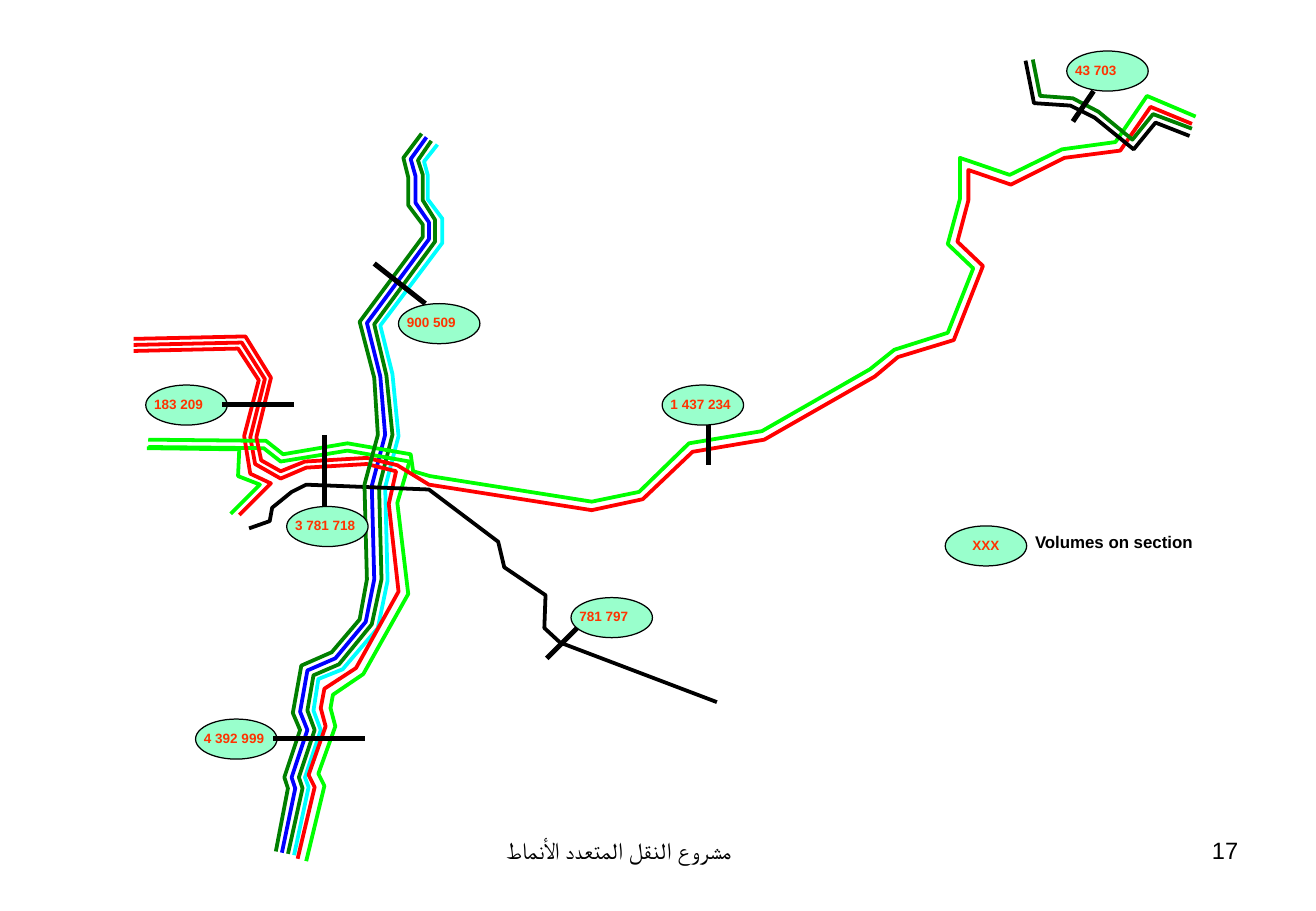
"""Transport network map with passenger volumes on each section."""
from dataclasses import dataclass
from itertools import pairwise
from math import hypot

from lxml.etree import SubElement
from pptx import Presentation
from pptx.dml.color import RGBColor
from pptx.enum.shapes import MSO_CONNECTOR as Connector, MSO_SHAPE as Shape
from pptx.enum.text import PP_ALIGN as Align
from pptx.oxml.ns import qn
from pptx.util import Cm, Pt

BLACK = RGBColor.from_string("000000")
RED = RGBColor.from_string("FF0000")
LIME = RGBColor.from_string("00FF00")
GREEN = RGBColor.from_string("008000")
BLUE = RGBColor.from_string("0000FF")
CYAN = RGBColor.from_string("00FFFF")
MINT = RGBColor.from_string("99FFCC")
ORANGE = RGBColor.from_string("FF3300")

UNITS_PER_INCH = 100
SCALE = Cm(2.54) / UNITS_PER_INCH
OVAL_W, OVAL_H = 67, 33
LABEL_DX, LABEL_DY, LABEL_H = 3, 4, 23

VOLUME_FONT = {"name": "Arial", "size": Pt(8), "bold": True}
LEGEND_FONT = {"name": "Arial", "size": Pt(10), "bold": True}
FOOTER_FONT = {"name": "Arial", "size": Pt(14), "bold": False}

Point = tuple[int, int]
Points = tuple[Point, ...]


@dataclass(frozen=True)
class Route:
    color: RGBColor
    points: Points


@dataclass(frozen=True)
class Volume:
    left: int
    top: int
    text: str
    align: Align = Align.LEFT


@dataclass(frozen=True)
class Section:
    start: Point
    end: Point


@dataclass(frozen=True)
class Caption:
    box: tuple[int, int, int, int]
    text: str
    font: dict
    color: RGBColor = BLACK
    align: Align = Align.LEFT
    rtl: bool = False


def beside(points: Points, gap: float) -> Points:
    """Return a parallel line, to the right of travel for a positive gap."""
    normals = []
    for (x1, y1), (x2, y2) in pairwise(points):
        length = hypot(x2 - x1, y2 - y1)
        normals.append(((y1 - y2) / length, (x2 - x1) / length))
    befores, afters = normals[:1] + normals, normals + normals[-1:]
    moved = []
    for (x, y), (ax, ay), (bx, by) in zip(points, befores, afters):
        k = gap / (1 + ax * bx + ay * by)
        moved.append((round(x + k * (ax + bx)), round(y + k * (ay + by))))
    return tuple(moved)


SPINE = (
    (232, 702), (243, 649), (240, 640), (253, 601), (247, 586), (253, 552),
    (276, 542), (301, 512), (308, 477), (306, 400), (317, 358), (313, 310),
    (302, 266), (353, 197), (353, 183), (342, 167), (342, 145), (338, 131),
    (351, 113))
RED_WEST = (
    (110, 284), (199, 282), (218, 312), (206, 360), (210, 382), (231, 394),
    (252, 385), (302, 382), (326, 388))
LIME_WEST = ((122, 362), (219, 363), (233, 374), (286, 365), (338, 374))
SOUTH = (
    (320, 415), (328, 487), (293, 550), (267, 567), (264, 583), (268, 598),
    (254, 638), (259, 648), (245, 707))
EAST = (
    (353, 399), (487, 420), (529, 411), (570, 372), (629, 362), (720, 310),
    (739, 294), (785, 280), (809, 219), (788, 199), (797, 165), (797, 140),
    (832, 152), (876, 130), (922, 124), (947, 88), (981, 102))
NORTH_EAST = (
    (844, 50), (851, 85), (881, 87), (901, 97), (933, 123), (951, 101), (979, 112))
SOUTH_EAST = (
    (205, 435), (222, 429), (224, 418), (240, 405), (252, 399), (353, 403),
    (410, 446), (415, 467), (449, 490), (448, 517), (461, 529), (590, 578))
RED_SPUR = ((206, 390), (223, 398), (197, 424))
LIME_SPUR = ((121, 369), (197, 370), (196, 392), (214, 399), (190, 423))

ROUTES = (
    Route(BLUE, SPINE),
    Route(GREEN, beside(SPINE, 5.5)),
    Route(CYAN, beside(SPINE, 10.5)),
    Route(RED, RED_WEST + SOUTH),
    Route(LIME, beside(LIME_WEST, 6) + beside(SOUTH, -7.5)),
    Route(BLACK, SOUTH_EAST),
    Route(RED, beside(RED_WEST[:4], 5) + RED_SPUR),
    Route(LIME, LIME_SPUR),
    Route(LIME, LIME_WEST + ((340, 388),) + beside(EAST, -7)),
    Route(RED, beside(RED_WEST, -5) + EAST),
    Route(GREEN, beside(NORTH_EAST, -6)),
    Route(BLACK, NORTH_EAST),
    Route(GREEN, beside(SPINE, -5.5)),
)
VOLUMES = (
    Volume(545, 317, "1 437 234"), Volume(470, 492, "781 797"),
    Volume(161, 592, "4 392 999"), Volume(236, 417, "3 781 718"),
    Volume(120, 317, "183 209"), Volume(328, 250, "900 509"),
    Volume(878, 42, "43 703"), Volume(778, 433, "XXX", Align.CENTER),
)
SECTIONS = (
    Section((242, 333), (183, 333)), Section((267, 358), (267, 417)),
    Section((308, 217), (350, 250)), Section((583, 350), (583, 383)),
    Section((475, 517), (450, 542)), Section((225, 608), (300, 608)),
    Section((900, 75), (883, 100)),
)
CAPTIONS = (
    Caption((842, 433, 167, 27), "Volumes on section", LEGEND_FONT),
    Caption((338, 683, 343, 52), "مشروع النقل المتعدد الأنماط", FOOTER_FONT,
            align=Align.CENTER, rtl=True),
    Caption((776, 683, 253, 52), "17", FOOTER_FONT, align=Align.RIGHT),
)


def emu(*units: int) -> list[int]:
    """Convert map units to slide lengths."""
    return [Cm(2.54 * u / UNITS_PER_INCH) for u in units]


def set_line(shape, color: RGBColor, width: float) -> None:
    """Set the outline colour and width in points."""
    shape.line.color.rgb = color
    shape.line.width = Pt(width)


def draw_route(shapes, route: Route) -> None:
    """Draw one route as an open outline."""
    builder = shapes.build_freeform(*route.points[0], scale=SCALE)
    builder.add_line_segments(route.points[1:], close=False)
    sp = builder.convert_to_shape()
    sp.shadow.inherit = False
    sp.fill.background()
    set_line(sp, route.color, 2.25)


def draw_caption(shapes, caption: Caption) -> None:
    """Draw one formatted line of text."""
    tf = shapes.add_textbox(*emu(*caption.box)).text_frame
    tf.word_wrap = True
    p = tf.paragraphs[0]
    p.alignment = caption.align
    if caption.rtl:
        p._p.get_or_add_pPr().set("rtl", "1")
    r = p.add_run()
    r.text = caption.text
    for name, value in caption.font.items():
        setattr(r.font, name, value)
    r.font.color.rgb = caption.color


def draw_volume(shapes, volume: Volume) -> None:
    """Draw a grouped oval and its volume."""
    group = shapes.add_group_shape().shapes
    sp = group.add_shape(Shape.OVAL, *emu(volume.left, volume.top, OVAL_W, OVAL_H))
    sp.shadow.inherit = False
    sp.fill.solid()
    sp.fill.fore_color.rgb = MINT
    set_line(sp, BLACK, 0.75)
    box = (volume.left - LABEL_DX, volume.top + LABEL_DY, OVAL_W + 2 * LABEL_DX, LABEL_H)
    draw_caption(group, Caption(box, volume.text, VOLUME_FONT, ORANGE, volume.align))


def draw_section(shapes, section: Section) -> None:
    """Draw the bar that marks a counted section."""
    ends = emu(*section.start, *section.end)
    bar = shapes.add_connector(Connector.STRAIGHT, *ends)
    set_line(bar, BLACK, 3)
    SubElement(bar._element.spPr, qn("a:effectLst"))


def main() -> None:
    """Build and save the slide."""
    prs = Presentation()
    prs.slide_width, prs.slide_height = Cm(27.51), Cm(19.05)
    s = prs.slides.add_slide(prs.slide_layouts[6])
    for draw, items in ((draw_route, ROUTES), (draw_volume, VOLUMES),
                        (draw_section, SECTIONS), (draw_caption, CAPTIONS)):
        for item in items:
            draw(s.shapes, item)
    prs.save("out.pptx")


if __name__ == "__main__":
    main()
